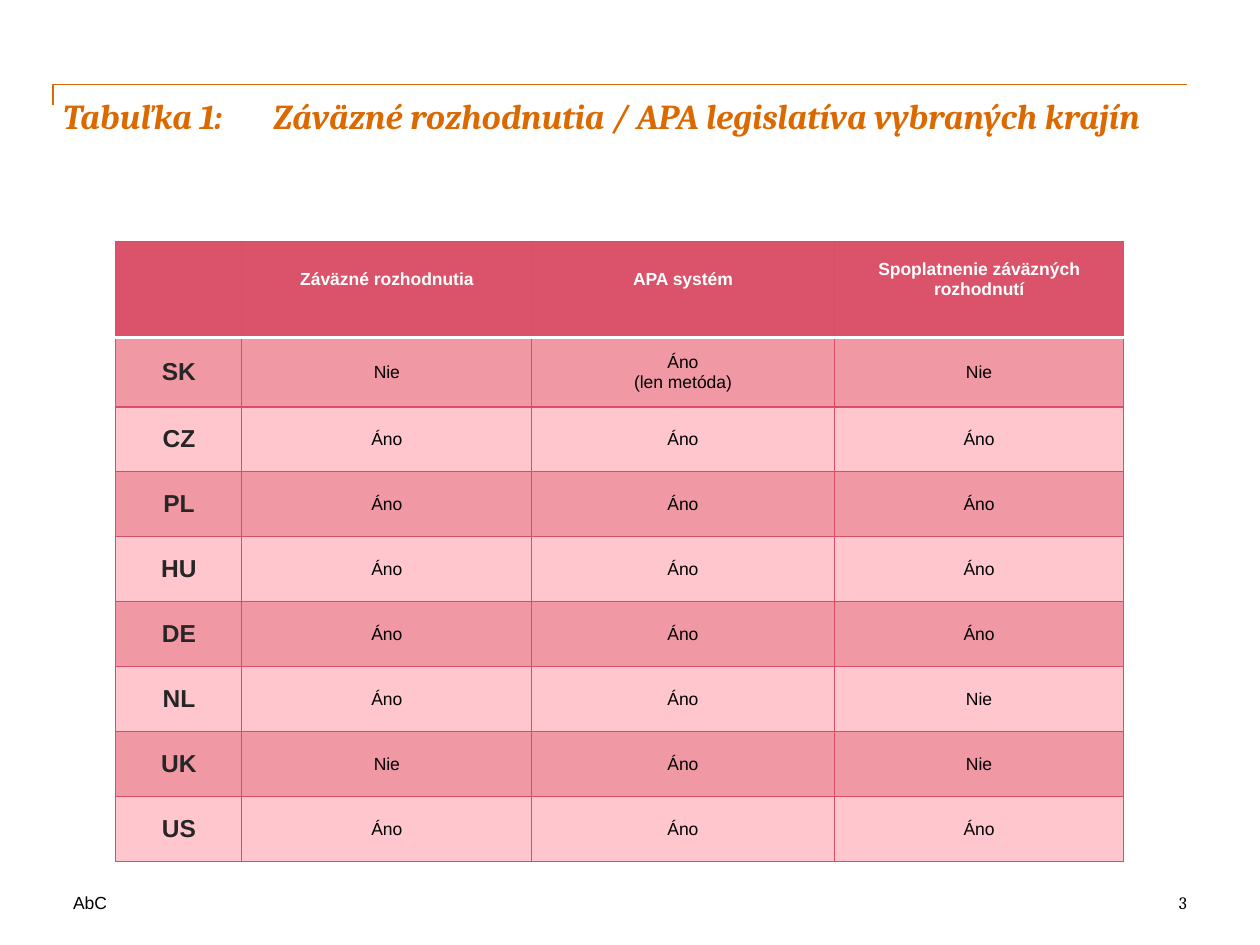
from dataclasses import dataclass

import pptx
import pptx.dml.color
import pptx.enum.shapes
import pptx.enum.text
import pptx.oxml
import pptx.oxml.ns
import pptx.util
from pptx.util import Inches

ORANGE = "DC6900"
ROSE = "DB536A"
BORDER = "D94E65"
BANDS = ("F198A5", "FFC6CD")
WHITE = "FFFFFF"
BLACK = "000000"
ALIGN = pptx.enum.text.PP_ALIGN


@dataclass(frozen=True)
class Style:
    size: int
    font: str
    color: str
    bold: bool = False
    italic: bool = False
    align: ALIGN = ALIGN.LEFT
    spacing: int = 0


@dataclass(frozen=True)
class Label:
    text: str
    left: float
    top: float
    width: float
    height: float
    style: Style


TITLE = Style(20, "Cambria", ORANGE, bold=True, italic=True, spacing=6)
HEADER = Style(10, "Arial", WHITE, bold=True, align=ALIGN.CENTER)
COUNTRY = Style(14, "Arial", "262626", bold=True, align=ALIGN.CENTER)
ANSWER = Style(10, "Arial", BLACK, align=ALIGN.CENTER)

LABELS = (
    Label("AbC", 0.58, 7.08, 2.83, 0.17, Style(10, "Arial", BLACK)),
    Label("3", 7.75, 7.08, 1.67, 0.17, Style(10, "Cambria", BLACK, align=ALIGN.RIGHT)),
    Label("Tabuľka 1:", 0.5, 0.75, 1.6, 0.5, TITLE),
    Label("Záväzné rozhodnutia / APA legislatíva vybraných krajín", 2.17, 0.75, 7.5, 0.5, TITLE),
)

ROWS = (
    ("", "Záväzné rozhodnutia", "APA systém", "Spoplatnenie záväzných rozhodnutí"),
    ("SK", "Nie", "Áno\n(len metóda)", "Nie"),
    ("CZ", "Áno", "Áno", "Áno"),
    ("PL", "Áno", "Áno", "Áno"),
    ("HU", "Áno", "Áno", "Áno"),
    ("DE", "Áno", "Áno", "Áno"),
    ("NL", "Áno", "Áno", "Nie"),
    ("UK", "Nie", "Áno", "Nie"),
    ("US", "Áno", "Áno", "Áno"),
)
COLUMN_WIDTHS = (1, 2.3, 2.4, 2.3)
TABLE_HEIGHT = 4.92
TOP_ROWS = (0.76, 0.55)


def rgb(color: str) -> pptx.dml.color.RGBColor:
    return pptx.dml.color.RGBColor.from_string(color)


def write(frame, text: str, style: Style) -> None:
    for index, line in enumerate(text.split("\n")):
        paragraph = frame.add_paragraph() if index else frame.paragraphs[0]
        paragraph.alignment = style.align
        paragraph.space_before = paragraph.space_after = pptx.util.Pt(style.spacing)
        run = paragraph.add_run()
        run.text = line
        run.font.size = pptx.util.Pt(style.size)
        run.font.name = style.font
        run.font.bold = style.bold
        run.font.italic = style.italic
        run.font.color.rgb = rgb(style.color)


def add_label(slide, label: Label) -> None:
    shape = slide.shapes.add_textbox(
        Inches(label.left), Inches(label.top), Inches(label.width), Inches(label.height))
    frame = shape.text_frame
    frame.word_wrap = True
    frame.margin_left = frame.margin_top = frame.margin_right = frame.margin_bottom = 0
    write(frame, label.text, label.style)


def add_title_rule(slide) -> None:
    """Draw the rule above the title, with a short drop at its left end."""
    connector = slide.shapes.add_connector(
        pptx.enum.shapes.MSO_CONNECTOR.ELBOW,
        Inches(9.42), Inches(0.67), Inches(0.42), Inches(0.83))
    connector.line.color.rgb = rgb(ORANGE)
    connector.line.width = pptx.util.Pt(1)
    properties = connector._element.spPr
    properties.find(pptx.oxml.ns.qn("a:prstGeom")).set("prst", "bentConnector2")
    properties.append(pptx.oxml.parse_xml(
        f'<a:effectLst {pptx.oxml.ns.nsdecls("a")}/>'))


def set_border(cell, side: str, color: str, points: float) -> None:
    cell._tc.get_or_add_tcPr().append(pptx.oxml.parse_xml(
        f'<a:ln{side} {pptx.oxml.ns.nsdecls("a")} w="{pptx.util.Pt(points)}">'
        f'<a:solidFill><a:srgbClr val="{color}"/></a:solidFill></a:ln{side}>'))


def fill_cell(cell, text: str, row: int, column: int) -> None:
    for side in "LRTB":
        under_header = (row, side) in ((0, "B"), (1, "T"))
        set_border(cell, side, *((WHITE, 2) if under_header else (BORDER, 0.75)))
    cell.fill.solid()
    cell.fill.fore_color.rgb = rgb(BANDS[(row - 1) % 2] if row else ROSE)
    cell.vertical_anchor = pptx.enum.text.MSO_ANCHOR.MIDDLE
    if row == 0:
        cell.margin_bottom = Inches(0.21)
    if text:
        style = HEADER if row == 0 else ANSWER if column else COUNTRY
        write(cell.text_frame, text, style)


def add_country_table(slide) -> None:
    table = slide.shapes.add_table(
        len(ROWS), len(COLUMN_WIDTHS), Inches(0.92), Inches(1.92),
        Inches(sum(COLUMN_WIDTHS)), Inches(TABLE_HEIGHT)).table
    for column, width in zip(table.columns, COLUMN_WIDTHS):
        column.width = Inches(width)
    other_count = len(ROWS) - len(TOP_ROWS)
    other_height = (TABLE_HEIGHT - sum(TOP_ROWS)) / other_count
    for row, height in zip(table.rows, TOP_ROWS + (other_height,) * other_count):
        row.height = Inches(height)
    for row, texts in enumerate(ROWS):
        for column, text in enumerate(texts):
            fill_cell(table.cell(row, column), text, row, column)


def main() -> None:
    presentation = pptx.Presentation()
    presentation.slide_width = Inches(10)
    presentation.slide_height = Inches(7.5)
    slide = presentation.slides.add_slide(presentation.slide_layouts[6])
    add_title_rule(slide)
    for label in LABELS:
        add_label(slide, label)
    add_country_table(slide)
    presentation.save("out.pptx")


if __name__ == "__main__":
    main()
